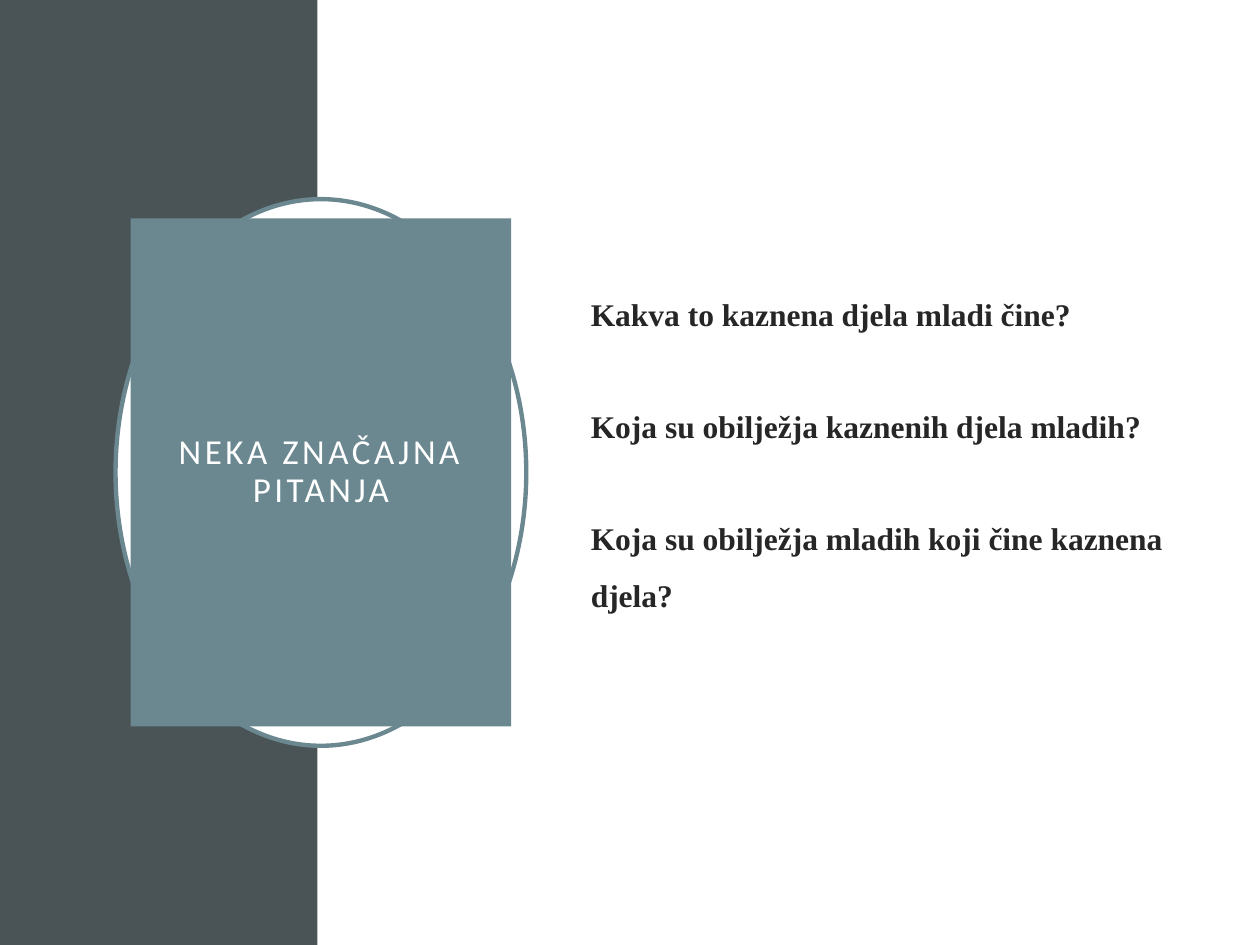
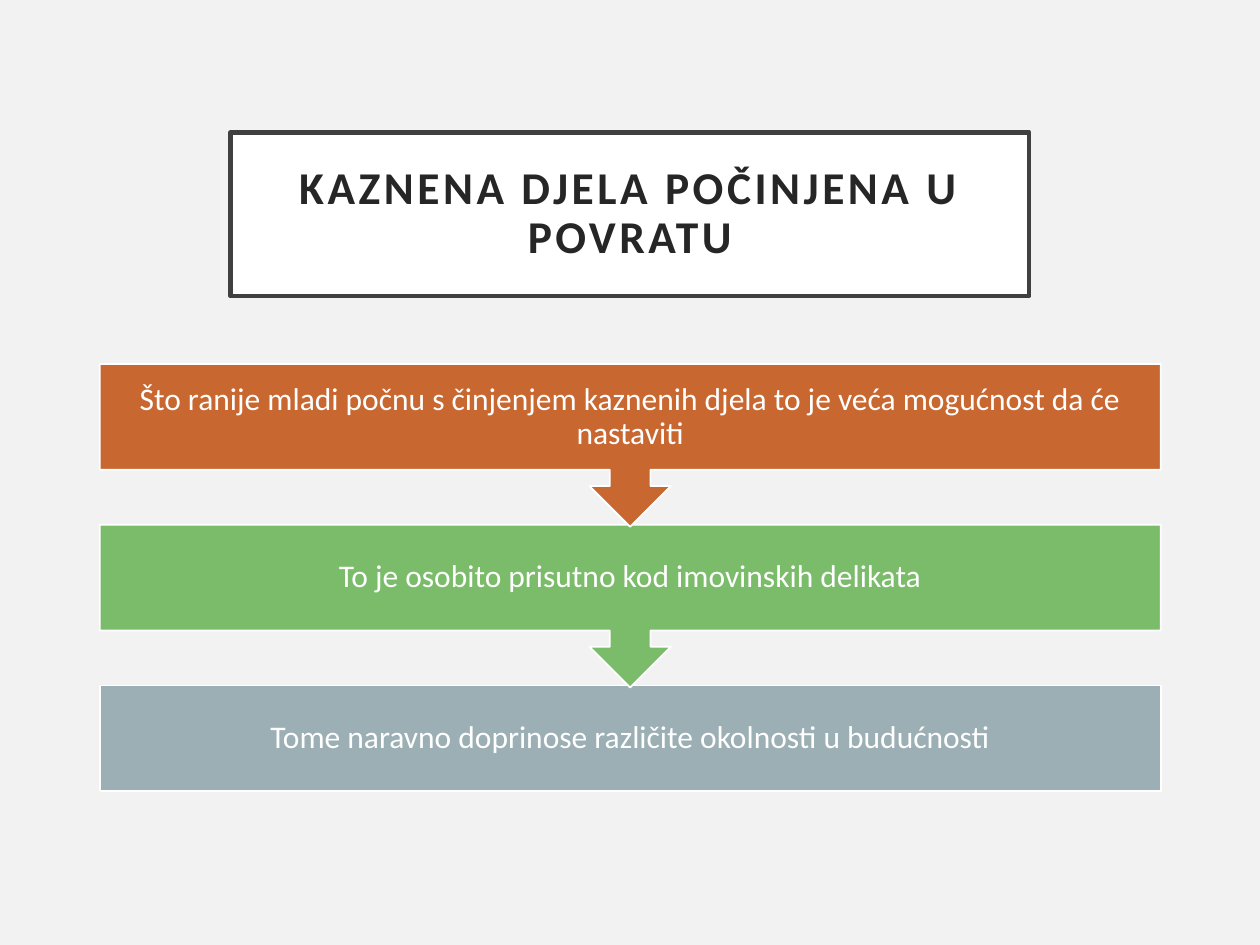
from dataclasses import dataclass

from pptx import Presentation
from pptx.dml.color import RGBColor as Rgb
from pptx.enum.shapes import MSO_SHAPE as Shape
from pptx.enum.text import MSO_ANCHOR as Anchor, PP_ALIGN as Align
from pptx.util import Cm, Pt


@dataclass(frozen=True)
class Theme:
    """Colours, fonts and type sizes of the presentation."""
    white: str = "FFFFFF"
    pale: str = "F2F2F2"
    slate: str = "4A5356"
    teal: str = "6B8891"
    ink: str = "262626"
    frame: str = "404040"
    steps: tuple = ("C96731", "7ABC69", "9BAFB5")
    sans: str = "Calibri"
    serif: str = "Times New Roman"
    body_size: int = 18
    side_title_size: int = 20
    title_size: int = 26
    title_spacing: int = 200
    title_inset: float = 0.51
    step_inset: float = 0.36
    outline: float = 2.5
    thin_outline: float = 1


THEME = Theme()


def add_slide(presentation, background):
    """Add a blank slide with a plain background."""
    slide = presentation.slides.add_slide(presentation.slide_layouts[6])
    slide.background.fill.solid()
    slide.background.fill.fore_color.rgb = Rgb.from_string(background)
    return slide


def add_block(slide, kind, box, fill, line=None, width=THEME.outline):
    """Add a flat preset shape in a box given in centimetres."""
    shape = slide.shapes.add_shape(kind, *map(Cm, box))
    shape.shadow.inherit = False
    shape.fill.solid()
    shape.fill.fore_color.rgb = Rgb.from_string(fill)
    if line:
        shape.line.color.rgb = Rgb.from_string(line)
        shape.line.width = Pt(width)
    else:
        shape.line.fill.background()
    return shape


def write(shape, *texts, size=THEME.body_size, color=THEME.white, font=THEME.sans,
          bold=False, align=Align.CENTER, inset=None, leading=0.9, spacing=None, gaps=()):
    """Write one paragraph per text, with optional gaps in points between them."""
    frame = shape.text_frame
    frame.word_wrap = True
    frame.vertical_anchor = Anchor.MIDDLE
    if inset is not None:
        frame.margin_left = frame.margin_right = Cm(inset)
        frame.margin_top = frame.margin_bottom = Cm(inset)
    for index, text in enumerate(texts):
        paragraph = frame.add_paragraph() if index else frame.paragraphs[0]
        paragraph.alignment = align
        paragraph.line_spacing = leading
        if index and gaps:
            paragraph.space_before = Pt(gaps[index - 1])
        run = paragraph.add_run()
        run.text = text
        run.font.name = font
        run.font.size = Pt(size)
        run.font.bold = bold
        run.font.color.rgb = Rgb.from_string(color)
        if spacing:
            run.font._element.set("spc", str(spacing))


def add_title(slide, box, text, fill, line=None, **text_format):
    """Add a title panel with letter-spaced text."""
    panel = add_block(slide, Shape.RECTANGLE, box, fill, line)
    write(panel, text, inset=THEME.title_inset, spacing=THEME.title_spacing, **text_format)


def add_side_panel(slide, box, text):
    """Add the dark side band with the ellipse and title panel over its edge."""
    left, top, width, height = box
    add_block(slide, Shape.RECTANGLE, box, THEME.slate)
    middle = top + height / 2
    center = left + width + 0.07

    def centered(panel_width, panel_height):
        """Return a box centred on the edge of the band."""
        return center - panel_width / 2, middle - panel_height / 2, panel_width, panel_height

    add_block(slide, Shape.OVAL, centered(8.28, 11.02), THEME.white, THEME.teal)
    add_title(slide, centered(7.67, 10.24), text, THEME.teal, size=THEME.side_title_size)


def add_questions(slide, box, questions, gaps):
    """Add the list of questions."""
    text_box = slide.shapes.add_textbox(*map(Cm, box))
    write(text_box, *questions, color=THEME.ink, font=THEME.serif, bold=True,
          align=Align.LEFT, leading=1, gaps=gaps)


def add_step_flow(slide, box, steps):
    """Stack the steps, each callout pointing at the next one below."""
    left, top, width, height = box
    step_height, callout_height = 2.13, 3.28
    pitch = (height - step_height) / (len(steps) - 1)
    last = len(steps) - 1
    for index in range(last, -1, -1):
        kind = Shape.RECTANGLE if index == last else Shape.DOWN_ARROW_CALLOUT
        block_height = step_height if index == last else callout_height
        block = add_block(slide, kind, (left, top + index * pitch, width, block_height),
                          THEME.steps[index], THEME.white, THEME.thin_outline)
        write(block, steps[index], inset=THEME.step_inset)


def build_questions_slide(presentation):
    """Build the slide of key questions."""
    slide = add_slide(presentation, THEME.white)
    add_side_panel(slide, (0, 0, 6.4, 19.05), "NEKA ZNAČAJNA PITANJA")
    questions = ("Kakva to kaznena djela mladi čine?",
                 "Koja su obilježja kaznenih djela mladih?",
                 "Koja su obilježja mladih koji čine kaznena",
                 "djela?")
    add_questions(slide, (11.66, 2.95, 12.65, 12.42), questions, gaps=(42.6, 42.6, 11))


def build_reoffending_slide(presentation):
    """Build the slide on repeated offences."""
    slide = add_slide(presentation, THEME.pale)
    add_title(slide, (4.65, 2.67, 16.1, 3.3), "KAZNENA DJELA POČINJENA U POVRATU",
              THEME.white, THEME.frame, size=THEME.title_size, color=THEME.ink, bold=True)
    steps = ("Što ranije mladi počnu s činjenjem kaznenih djela to je veća mogućnost da će nastaviti",
             "To je osobito prisutno kod imovinskih delikata",
             "Tome naravno doprinose različite okolnosti u budućnosti")
    add_step_flow(slide, (2.01, 7.34, 21.39, 8.61), steps)


def main():
    """Build and save the presentation."""
    presentation = Presentation()
    presentation.slide_width = Cm(25.4)
    presentation.slide_height = Cm(19.05)
    build_questions_slide(presentation)
    build_reoffending_slide(presentation)
    presentation.save("out.pptx")


if __name__ == "__main__":
    main()
